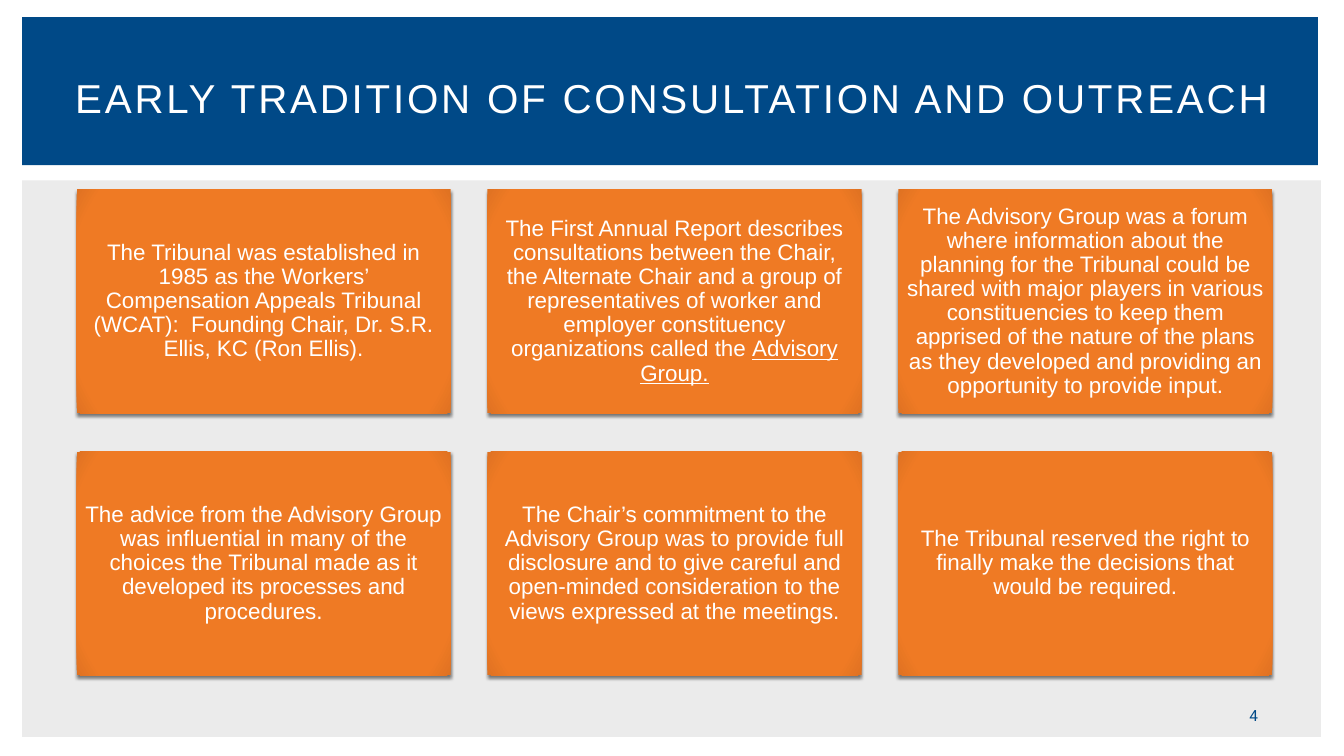
"""Build the slide on the early tradition of consultation and outreach."""
from lxml import etree
from pptx import Presentation
from pptx.dml.color import RGBColor
from pptx.enum import shapes, text
from pptx.oxml import parse_xml
from pptx.util import Inches, Pt

COLORS = {"navy": "004987", "grey": "EBEBEB", "white": "FFFFFF",
          "orange": "EF7A24", "edge": "DF7222", "shadow": "000000"}
TITLE = "EARLY TRADITION OF CONSULTATION AND OUTREACH"
PAGE_NUMBER = "4"
PANELS = [("grey", (0.22, 1.79, 12.88, 5.52)), ("navy", (0.22, 0.17, 12.85, 1.47))]
CARDS = [
    ("The Tribunal was established in 1985 as the Workers’ Compensation Appeals "
     "Tribunal (WCAT):  Founding Chair, Dr. S.R. Ellis, KC (Ron Ellis).", ""),
    ("The First Annual Report describes consultations between the Chair, the "
     "Alternate Chair and a group of representatives of worker and employer "
     "constituency organizations called the ", "Advisory Group."),
    ("The Advisory Group was a forum where information about the planning for the "
     "Tribunal could be shared with major players in various constituencies to keep "
     "them apprised of the nature of the plans as they developed and providing an "
     "opportunity to provide input.", ""),
    ("The advice from the Advisory Group was influential in many of the choices the "
     "Tribunal made as it developed its processes and procedures.", ""),
    ("The Chair’s commitment to the Advisory Group was to provide full disclosure "
     "and to give careful and open-minded consideration to the views expressed at "
     "the meetings.", ""),
    ("The Tribunal reserved the right to finally make the decisions that would be "
     "required.", ""),
]
COLUMNS = 3
CARD_LEFT, CARD_TOP, CARD_WIDTH, CARD_HEIGHT = 0.76, 1.88, 3.71, 2.22
COLUMN_STEP, ROW_STEP = 4.075, 2.6
DML = "http://schemas.openxmlformats.org/drawingml/2006/main"


def rgb(name):
    return RGBColor.from_string(COLORS[name])


def add_box(slide, box, fill):
    shape = slide.shapes.add_shape(shapes.MSO_SHAPE.RECTANGLE, *map(Inches, box))
    shape.shadow.inherit = False
    shape.fill.solid()
    shape.fill.fore_color.rgb = rgb(fill)
    shape.line.fill.background()
    return shape


def style_text(frame, font, size, color):
    frame.word_wrap = True
    frame.auto_size = text.MSO_AUTO_SIZE.NONE
    frame.vertical_anchor = text.MSO_ANCHOR.MIDDLE
    paragraph = frame.paragraphs[0]
    paragraph.alignment = text.PP_ALIGN.CENTER
    for run in paragraph.runs:
        run.font.name = font
        run.font.size = Pt(size)
        run.font.color.rgb = rgb(color)


def shade_card(card):
    properties = card.element.spPr
    stops = "".join(
        f'<a:gs pos="{pos}"><a:srgbClr val="{COLORS[name]}"/></a:gs>'
        for pos, name in [(0, "orange"), (90000, "orange"), (100000, "edge")])
    gradient = parse_xml(
        f'<a:gradFill xmlns:a="{DML}" rotWithShape="1"><a:gsLst>{stops}</a:gsLst>'
        '<a:path path="circle"><a:fillToRect l="100000" t="100000" r="100000" '
        'b="100000"/></a:path></a:gradFill>')
    properties.replace(properties.find(f"{{{DML}}}solidFill"), gradient)
    effects = properties.find(f"{{{DML}}}effectLst")
    shadow = etree.SubElement(
        effects, f"{{{DML}}}outerShdw", blurRad=str(Pt(2.5)), dist=str(Pt(2)),
        dir="5400000", algn="ctr", rotWithShape="0")
    tint = etree.SubElement(shadow, f"{{{DML}}}srgbClr", val=COLORS["shadow"])
    etree.SubElement(tint, f"{{{DML}}}alpha", val="50000")


def add_card(slide, index, plain, underlined):
    row, column = divmod(index, COLUMNS)
    card = add_box(slide, (CARD_LEFT + column * COLUMN_STEP, CARD_TOP + row * ROW_STEP,
                           CARD_WIDTH, CARD_HEIGHT), "orange")
    shade_card(card)
    frame = card.text_frame
    frame.margin_left = frame.margin_right = Inches(0.07)
    frame.margin_top = frame.margin_bottom = Inches(0.07)
    paragraph = frame.paragraphs[0]
    paragraph.text = plain
    paragraph.line_spacing = 0.9
    if underlined:
        ending = paragraph.add_run()
        ending.text = underlined
        ending.font.underline = True
    style_text(frame, "Arial", 16, "white")


def main():
    deck = Presentation()
    deck.slide_width, deck.slide_height = Inches(13.33), Inches(7.5)
    slide = deck.slides.add_slide(deck.slide_layouts[5])
    for fill, box in PANELS:
        add_box(slide, box, fill)

    heading = slide.shapes.title
    heading.left, heading.top = Inches(0.56), Inches(0.39)
    heading.width, heading.height = Inches(12.22), Inches(1.15)
    heading.text_frame.text = TITLE
    style_text(heading.text_frame, "Arial", 28.8, "white")
    heading.text_frame.paragraphs[0].runs[0].font.element.set("spc", "200") if hasattr(
        heading.text_frame.paragraphs[0].runs[0].font, "element") else \
        heading.element.find(f".//{{{DML}}}rPr").set("spc", "200")
    heading.element.getparent().append(heading.element)

    for index, (plain, underlined) in enumerate(CARDS):
        add_card(slide, index, plain, underlined)

    page = slide.shapes.add_textbox(*map(Inches, (12.01, 6.95, 0.85, 0.3)))
    page.text_frame.text = PAGE_NUMBER
    style_text(page.text_frame, "Roboto", 11, "navy")
    deck.save("out.pptx")


if __name__ == "__main__":
    main()
